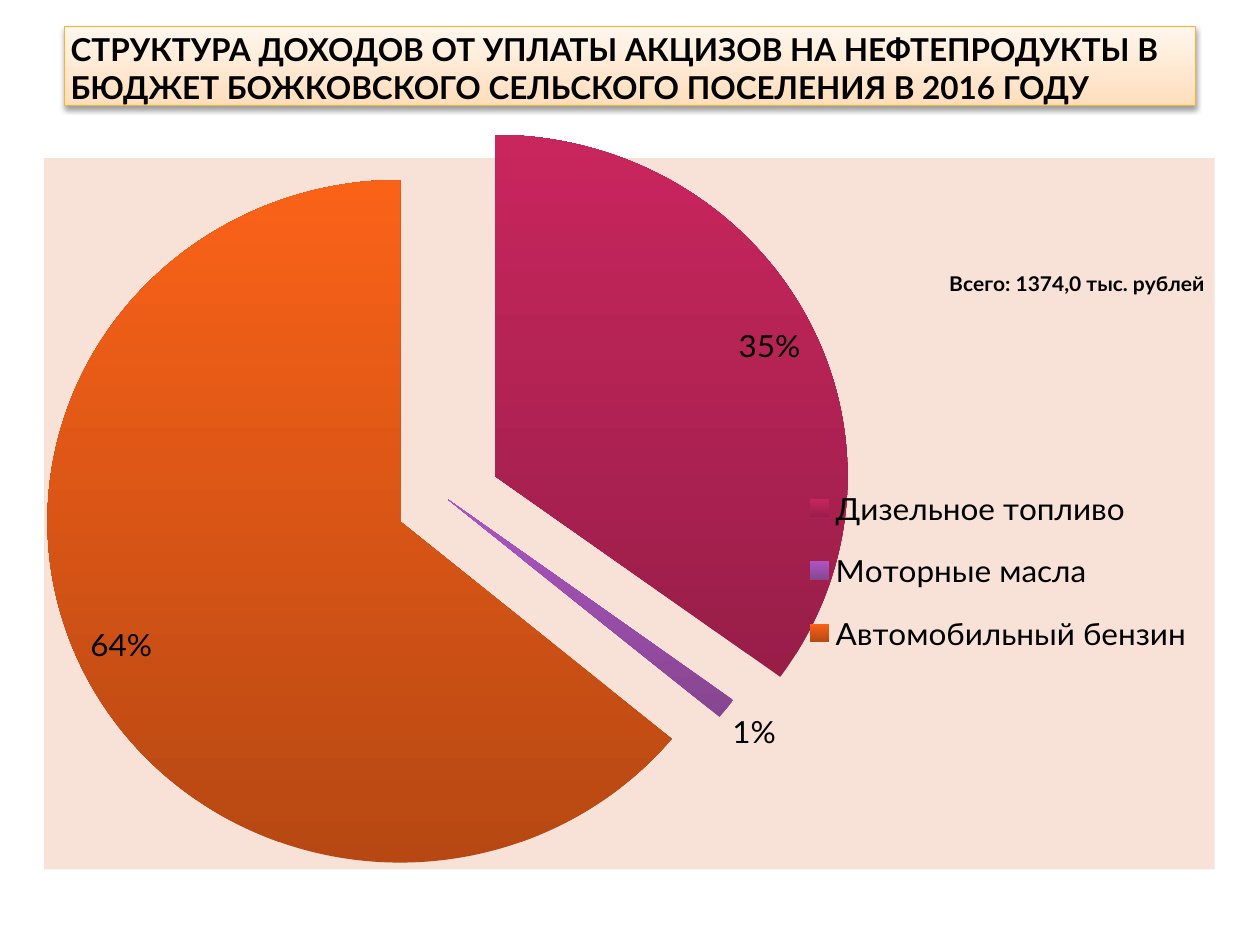
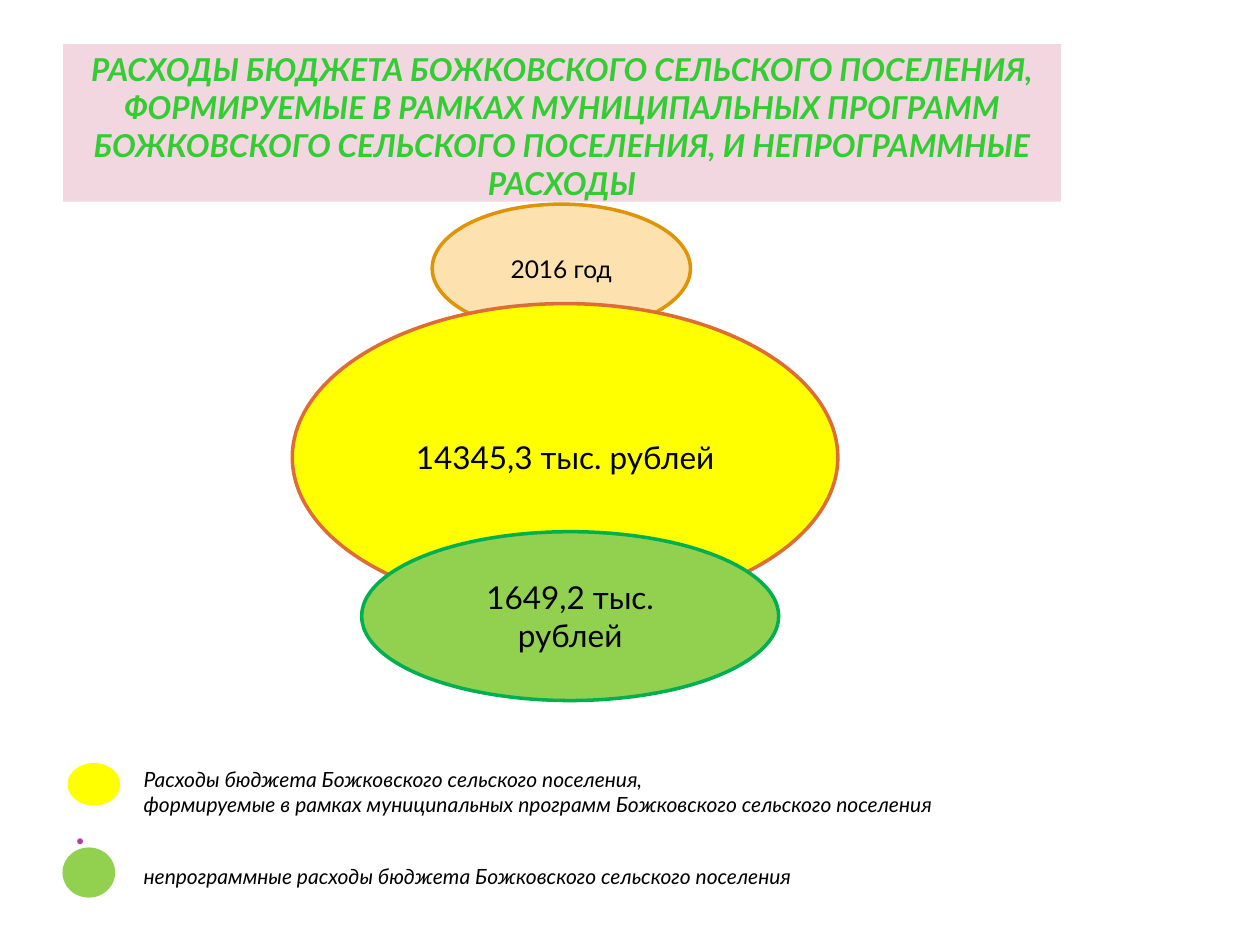
import dataclasses

import lxml.etree
import pptx
import pptx.chart.data
import pptx.dml.color
import pptx.enum.chart
import pptx.enum.shapes
import pptx.enum.text
import pptx.oxml
import pptx.oxml.ns
import pptx.util

FONT = "Lato"
BLACK = "000000"
PROGRAM_YELLOW = "FFFF00"
OTHER_GREEN = "92D050"
CELL = 0.25  # inches: the slide is 40 columns by 30 rows
COLUMNS, ROWS = 40, 30
ALIGN = pptx.enum.text.PP_ALIGN
ANCHOR = pptx.enum.text.MSO_ANCHOR
qn = pptx.oxml.ns.qn


@dataclasses.dataclass
class Box:
    """A rectangle in grid columns and rows."""
    left: float
    top: float
    width: float
    height: float

    def inside(self, left, top, width, height):
        return Box(self.left + left, self.top + top, width, height)

    def lengths(self):
        cells = (self.left, self.top, self.width, self.height)
        return [pptx.util.Inches(cell * CELL) for cell in cells]


def color(value):
    return pptx.dml.color.RGBColor.from_string(value)


def fill_solid(fill, value):
    fill.solid()
    fill.fore_color.rgb = color(value)


def fill_upward(fill, bottom, top):
    """Fill with a gradient that runs from the bottom to the top."""
    fill.gradient()
    fill.gradient_angle = 90
    for stop, value in zip(fill.gradient_stops, (bottom, top)):
        stop.color.rgb = color(value)


def format_font(font, size, value=BLACK, bold=False, italic=False):
    font.name = FONT
    font.size = pptx.util.Pt(size)
    font.color.rgb = color(value)
    font.bold = bold
    font.italic = italic


def add_lines(paragraph, lines, **style):
    for index, line in enumerate(lines):
        if index:
            paragraph.add_line_break()
        run = paragraph.add_run()
        run.text = line
        format_font(run.font, **style)


def place(shape, box):
    shape.left, shape.top, shape.width, shape.height = box.lengths()


def place_title(slide, box, lines, align, **style):
    title = slide.shapes.title
    place(title, box)
    frame = title.text_frame
    frame.word_wrap = True
    frame.auto_size = pptx.enum.text.MSO_AUTO_SIZE.NONE
    frame.vertical_anchor = ANCHOR.BOTTOM
    frame.margin_left = frame.margin_right = pptx.util.Inches(0.05)
    frame.margin_top = frame.margin_bottom = 0
    paragraph = frame.paragraphs[0]
    paragraph.alignment = align
    add_lines(paragraph, lines, size=18, bold=True, **style)
    return title


def add_soft_shadow(shape):
    shape._element.spPr.append(pptx.oxml.parse_xml(
        f'<a:effectLst {pptx.oxml.ns.nsdecls("a")}>'
        '<a:outerShdw blurRad="39000" dist="20000" dir="5400000" rotWithShape="0">'
        f'<a:srgbClr val="{BLACK}"><a:alpha val="38000"/></a:srgbClr>'
        '</a:outerShdw></a:effectLst>'))


def set_layout(parent, after, inner=False, **shares):
    """Place a chart part by shares of the chart, after the named child."""
    for old in parent.findall(qn("c:layout")):
        parent.remove(old)
    layout = parent.makeelement(qn("c:layout"))
    manual = lxml.etree.SubElement(layout, qn("c:manualLayout"))
    settings = {"layoutTarget": "inner"} if inner else {}
    settings.update(xMode="edge", yMode="edge", **shares)
    for name, value in settings.items():
        lxml.etree.SubElement(manual, qn(f"c:{name}")).set("val", str(value))
    if after:
        parent.find(qn(after)).addnext(layout)
    else:
        parent.insert(0, layout)


def add_chart_background(chart, value):
    chart._chartSpace.find(qn("c:chart")).addnext(pptx.oxml.parse_xml(
        f'<c:spPr {pptx.oxml.ns.nsdecls("c", "a")}>'
        f'<a:solidFill><a:srgbClr val="{value}"/></a:solidFill>'
        '<a:ln><a:noFill/></a:ln></c:spPr>'))


def format_slice(point, bottom, top, explosion):
    fill_upward(point.format.fill, bottom, top)
    point.format.line.fill.background()
    properties = point.format._element.find(qn("c:spPr"))
    if properties is None:
        return
    element = properties.makeelement(qn("c:explosion"))
    element.set("val", str(explosion))
    properties.addprevious(element)


def explode_slices(series, explosions):
    for slice_element in series._element.findall(qn("c:dPt")):
        index = int(slice_element.find(qn("c:idx")).get("val"))
        explosion = slice_element.makeelement(qn("c:explosion"))
        explosion.set("val", str(explosions[index]))
        slice_element.find(qn("c:spPr")).addprevious(explosion)


def add_fuel_pie(slide, box):
    fuels = [  # name, percent, bottom colour, top colour, explosion
        ("Дизельное топливо", 35, "981E48", "C9265E", 15),
        ("Моторные масла", 1, "86468F", "AD55C5", 0),
        ("Автомобильный бензин", 64, "B74813", "FA6218", 15),
    ]
    data = pptx.chart.data.CategoryChartData()
    data.categories = [fuel[0] for fuel in fuels]
    data.add_series("Series 1", [fuel[1] for fuel in fuels])
    chart = slide.shapes.add_chart(
        pptx.enum.chart.XL_CHART_TYPE.PIE, *box.lengths(), data).chart
    format_font(chart.font, 18)
    add_chart_background(chart, "F8E2D7")

    chart.has_title = True
    add_lines(chart.chart_title.text_frame.paragraphs[0],
              ["Всего: 1374,0 тыс. рублей"], size=12, bold=True)
    set_layout(chart.chart_title._element, "c:tx", x=0.77, y=0.15)

    chart.has_legend = True
    chart.legend.position = pptx.enum.chart.XL_LEGEND_POSITION.RIGHT
    chart.legend.include_in_layout = False
    format_font(chart.legend.font, 18)
    set_layout(chart.legend._element, "c:legendPos",
               x=0.64, y=0.43, w=0.35, h=0.3)

    plot = chart.plots[0]
    plot.vary_by_categories = True
    set_layout(plot._element.getparent(), None, inner=True,
               x=0.01, y=0, w=0.67, h=0.96)
    plot.has_data_labels = True
    labels = plot.data_labels
    labels.show_value = False
    labels.show_percentage = True
    labels.number_format = "0%"
    labels.number_format_is_linked = False
    labels.position = pptx.enum.chart.XL_LABEL_POSITION.BEST_FIT
    format_font(labels.font, 18)

    series = plot.series[0]
    for index, (_, _, bottom, top, _) in enumerate(fuels):
        slice_format = series.points[index].format
        fill_upward(slice_format.fill, bottom, top)
        slice_format.line.fill.background()
    explode_slices(series, [fuel[4] for fuel in fuels])


def add_ellipse(slide, box, fill, line, text="", size=18):
    ellipse = slide.shapes.add_shape(
        pptx.enum.shapes.MSO_SHAPE.OVAL, *box.lengths())
    ellipse.shadow.inherit = False
    fill_solid(ellipse.fill, fill)
    ellipse.line.color.rgb = color(line)
    ellipse.line.width = pptx.util.Pt(2)
    if text:
        frame = ellipse.text_frame
        frame.word_wrap = True
        frame.vertical_anchor = ANCHOR.MIDDLE
        frame.paragraphs[0].alignment = ALIGN.CENTER
        add_lines(frame.paragraphs[0], [text], size=size)


def add_expense_ellipses(slide, box):
    add_ellipse(slide, box.inside(4.44, 0, 8.2, 4.08),
                "FDE2B0", "DF9307", "2016 год", 14)
    add_ellipse(slide, box.inside(0, 3.16, box.width, 9.76),
                PROGRAM_YELLOW, "DE6C36", "14345,3 тыс. рублей")
    add_ellipse(slide, box.inside(2.2, 10.4, 13.24, 5.36),
                OTHER_GREEN, "00B050", "1649,2 тыс. рублей")


def fill_key(slide, box):
    """Explain the ellipse colours in the body placeholder."""
    body = slide.placeholders[1]
    place(body, box)
    frame = body.text_frame
    frame.word_wrap = True
    frame.auto_size = pptx.enum.text.MSO_AUTO_SIZE.NONE
    frame.vertical_anchor = ANCHOR.TOP
    entries = [  # lines, indent in inches, style
        (["Расходы бюджета Божковского сельского поселения,",
          "формируемые в рамках муниципальных программ Божковского "
          "сельского поселения"], 0.54, {"size": 12, "italic": True}),
        (["•"], 0, {"size": 9, "value": "B13F9A"}),
        (["непрограммные расходы бюджета Божковского сельского поселения"],
         0.54, {"size": 12, "italic": True}),
    ]
    for index, (lines, indent, style) in enumerate(entries):
        paragraph = frame.add_paragraph() if index else frame.paragraphs[0]
        properties = paragraph._p.get_or_add_pPr()
        properties.set("marL", str(pptx.util.Inches(indent)))
        properties.set("indent", "0")
        lxml.etree.SubElement(properties, qn("a:buNone"))
        paragraph.space_before = pptx.util.Pt(8 if index else 0)
        add_lines(paragraph, lines, **style)
    for marker, value in (((0.2, 0.16, 1.56, 1.24), PROGRAM_YELLOW),
                          ((0.04, 2.84, 1.56, 1.48), OTHER_GREEN)):
        add_ellipse(slide, box.inside(*marker), value, value)


def add_income_slide(presentation):
    slide = presentation.slides.add_slide(presentation.slide_layouts[5])
    title = place_title(
        slide, Box(2.04, 0.84, 35.92, 2.52),
        ["СТРУКТУРА ДОХОДОВ ОТ УПЛАТЫ АКЦИЗОВ НА НЕФТЕПРОДУКТЫ В БЮДЖЕТ "
         "БОЖКОВСКОГО СЕЛЬСКОГО ПОСЕЛЕНИЯ В 2016 ГОДУ"], ALIGN.LEFT)
    fill_upward(title.fill, "FFDEBC", "FFF6ED")
    title.line.color.rgb = color("F8B333")
    title.line.width = pptx.util.Pt(0.75)
    add_soft_shadow(title)
    add_fuel_pie(slide, Box(1.4, 4.28, 37.16, 23.32))


def add_expense_slide(presentation):
    slide = presentation.slides.add_slide(presentation.slide_layouts[1])
    title = place_title(
        slide, Box(2, 1.4, 31.68, 5),
        ["РАСХОДЫ БЮДЖЕТА БОЖКОВСКОГО СЕЛЬСКОГО ПОСЕЛЕНИЯ,",
         "ФОРМИРУЕМЫЕ В РАМКАХ МУНИЦИПАЛЬНЫХ ПРОГРАММ БОЖКОВСКОГО "
         "СЕЛЬСКОГО ПОСЕЛЕНИЯ, И НЕПРОГРАММНЫЕ РАСХОДЫ"],
        ALIGN.CENTER, value="33CC33", italic=True)
    fill_solid(title.fill, "F2D7E0")
    fill_key(slide, Box(2, 24.12, 32.8, 4.12))
    add_expense_ellipses(slide, Box(9.28, 6.48, 17.32, 15.76))


def main():
    presentation = pptx.Presentation()
    presentation.slide_width = pptx.util.Inches(COLUMNS * CELL)
    presentation.slide_height = pptx.util.Inches(ROWS * CELL)
    add_income_slide(presentation)
    add_expense_slide(presentation)
    presentation.save("out.pptx")


if __name__ == "__main__":
    main()
